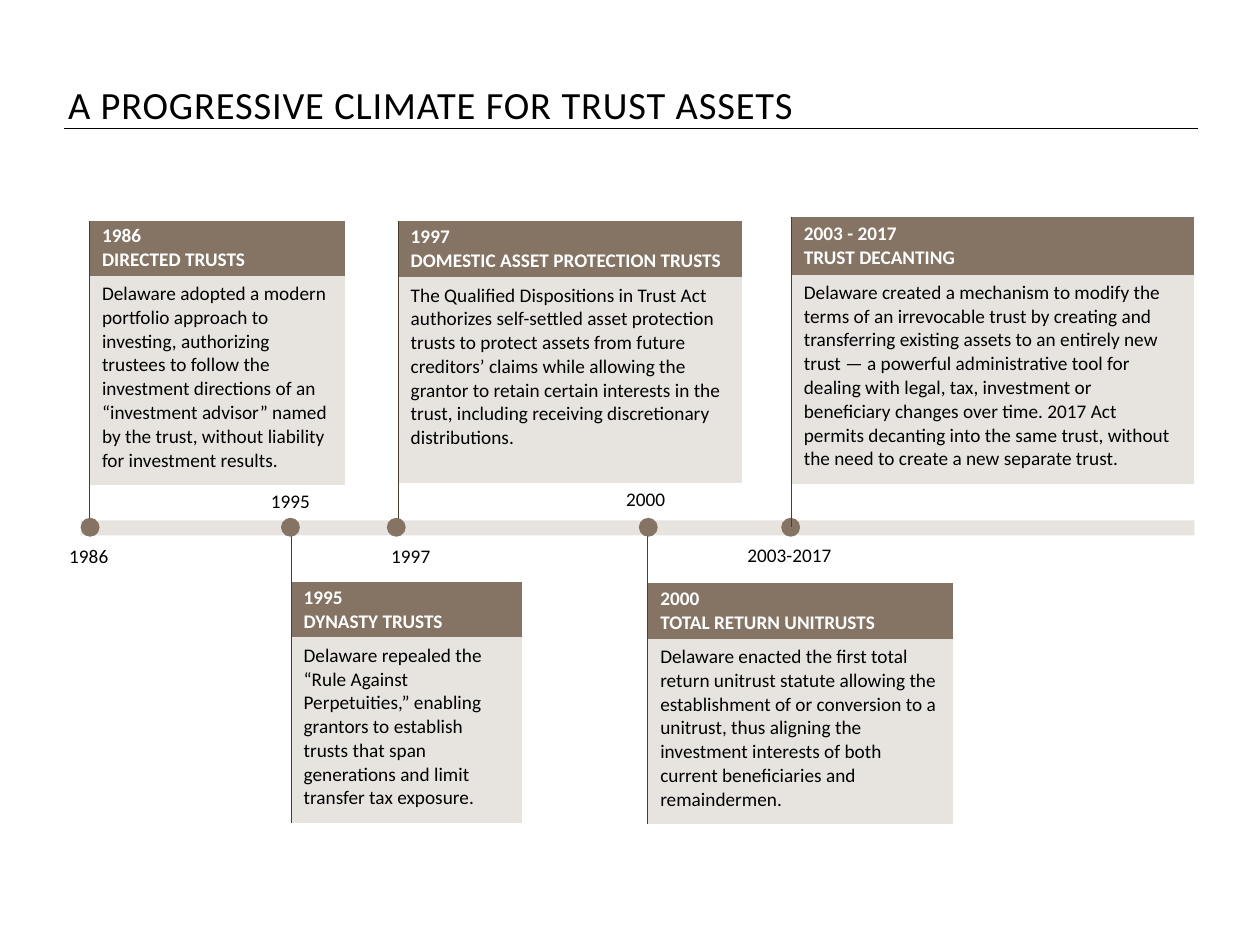
from lxml import etree
from pptx import Presentation
from pptx.dml.color import RGBColor
from pptx.enum.shapes import MSO_CONNECTOR, MSO_SHAPE
from pptx.enum.text import MSO_ANCHOR, MSO_AUTO_SIZE, PP_ALIGN
from pptx.oxml import parse_xml
from pptx.oxml.ns import nsdecls, qn
from pptx.util import Inches, Pt

BROWN = RGBColor(0x85, 0x73, 0x63)
SAND = RGBColor(0xE7, 0xE3, 0xDF)
BLACK = RGBColor(0, 0, 0)
WHITE = RGBColor(0xFF, 0xFF, 0xFF)
FONT = "Calibri"
NO_STYLE = "{2D5ABB26-0587-4C30-8999-92F81FD0307C}"
DOT = 1.5

# The slide is a grid of 100 columns by 75 rows
prs = Presentation()
prs.slide_width, prs.slide_height = Inches(10), Inches(7.5)
COL, ROW = prs.slide_width / 100, prs.slide_height / 75
s = prs.slides.add_slide(prs.slide_layouts[5])


def grid(left, top, width, height):
    return int(left * COL), int(top * ROW), int(width * COL), int(height * ROW)


def add_card(left, top, width, rows, above, heading, body):
    """Table with heading, body and an empty row whose left border meets the axis."""
    table = s.shapes.add_table(3, 1, *grid(left, top, width, sum(rows))).table
    table.first_row = table.horz_banding = False
    table._tbl.tblPr.find(qn("a:tableStyleId")).text = NO_STYLE
    parts = [(heading, BROWN, WHITE, 0.03, 0.03), (body, SAND, BLACK, 0.05, 0.1)]
    blank = ("", None, BLACK, 0, 0)
    parts.insert(2 if above else 0, blank)
    for i, (text, fill, color, pad_top, pad_bottom) in enumerate(parts):
        table.rows[i].height = int(rows[i] * ROW)
        cell = table.cell(i, 0)
        cell.margin_top, cell.margin_bottom = Inches(pad_top), Inches(pad_bottom)
        cell._tc.get_or_add_tcPr().append(parse_xml(
            f'<a:lnL {nsdecls("a")} w="{Pt(0.25)}"><a:solidFill>'
            '<a:srgbClr val="483F2A"/></a:solidFill></a:lnL>'))
        if fill is None:
            cell.fill.background()
        else:
            cell.fill.solid()
            cell.fill.fore_color.rgb = fill
        if fill == BROWN:
            cell.vertical_anchor = MSO_ANCHOR.MIDDLE
        cell.text = text
        for p in cell.text_frame.paragraphs:
            p.font.size, p.font.name = Pt(11), FONT
            p.font.bold = fill == BROWN
            p.font.color.rgb = color


# Title and rule
title = s.shapes.title
title.left, title.top, title.width, title.height = grid(5.4, 4.8, 64, 5.4)
tf = title.text_frame
tf.text = "A PROGRESSIVE CLIMATE FOR TRUST ASSETS"
tf.margin_left = tf.margin_right = tf.margin_top = tf.margin_bottom = 0
tf.vertical_anchor = MSO_ANCHOR.BOTTOM
tf.auto_size = MSO_AUTO_SIZE.NONE
p = tf.paragraphs[0]
p.alignment, p.line_spacing = PP_ALIGN.LEFT, 0.95
p.font.size, p.font.name, p.font.color.rgb = Pt(22), FONT, BLACK
p.runs[0].font._element.set("spc", "50")

x1, y, length, _ = grid(5.1, 10.2, 90, 0)
rule = s.shapes.add_connector(MSO_CONNECTOR.STRAIGHT, x1, y, x1 + length, y)
rule.line.color.rgb, rule.line.width = BLACK, Pt(0.5)
etree.SubElement(rule._element.spPr, qn("a:effectLst"))

# Timeline axis
axis = s.shapes.add_shape(MSO_SHAPE.RECTANGLE, *grid(6.4, 41.3, 88.4, 1.2))
axis.shadow.inherit = False
axis.fill.solid()
axis.fill.fore_color.rgb = SAND
axis.line.fill.background()

# Cards: left, top, width, row heights, above the axis, heading, body
cards = [
    (23.1, 42, 18.3, (4.2, 4.4, 14.6), False, "1995\nDYNASTY TRUSTS",
     "Delaware repealed the “Rule Against Perpetuities,” enabling grantors to "
     "establish trusts that span generations and limit transfer tax exposure."),
    (51.4, 41.8, 24.2, (4.5, 4.4, 14.6), False, "2000\nTOTAL RETURN UNITRUSTS",
     "Delaware enacted the first total return unitrust statute allowing the "
     "establishment of or conversion to a unitrust, thus aligning the investment "
     "interests of both current beneficiaries and remaindermen."),
    (7.1, 17.5, 20.3, (4.4, 16.6, 3.1), True, "1986\nDIRECTED TRUSTS",
     "Delaware adopted a modern portfolio approach to investing, authorizing "
     "trustees to follow the investment directions of an “investment advisor” "
     "named by the trust, without liability for investment results."),
    (31.6, 17.5, 27.3, (4.5, 16.3, 3.2), True,
     "1997\nDOMESTIC ASSET PROTECTION TRUSTS",
     "The Qualified Dispositions in Trust Act authorizes self-settled asset "
     "protection trusts to protect assets from future creditors’ claims while "
     "allowing the grantor to retain certain interests in the trust, including "
     "receiving discretionary distributions."),
    (62.8, 17.2, 32, (4.6, 16.6, 3.4), True, "2003 - 2017\nTRUST DECANTING",
     "Delaware created a mechanism to modify the terms of an irrevocable trust by "
     "creating and transferring existing assets to an entirely new trust — a "
     "powerful administrative tool for dealing with legal, tax, investment or "
     "beneficiary changes over time. 2017 Act permits decanting into the same "
     "trust, without the need to create a new separate trust."),
]
for card in cards[:-1]:
    add_card(*card)

# Milestones: label, dot left, label left, label top, label width
milestones = [
    ("1986", 6.4, 4.2, 42.7, 5.7),
    ("1995", 22.3, 20.2, 38.3, 5.7),
    ("1997", 30.7, 29.5, 42.7, 6.2),
    ("2000", 50.7, 48.4, 38.2, 5.7),
    ("2003-2017", 62, 56.9, 42.6, 11.5),
]
for year, dot_left, left, top, width in milestones:
    dot = s.shapes.add_shape(MSO_SHAPE.OVAL, *grid(dot_left, 41.1, DOT, DOT))
    dot.shadow.inherit = False
    dot.fill.solid()
    dot.fill.fore_color.rgb = BROWN
    dot.line.fill.background()

    tf = s.shapes.add_textbox(*grid(left, top, width, 2.9)).text_frame
    tf.word_wrap = True
    p = tf.paragraphs[0]
    p.text, p.alignment = year, PP_ALIGN.CENTER
    p.font.size, p.font.name, p.font.color.rgb = Pt(11), FONT, BLACK

# The last card's border runs over its dot
add_card(*cards[-1])

prs.save("out.pptx")
